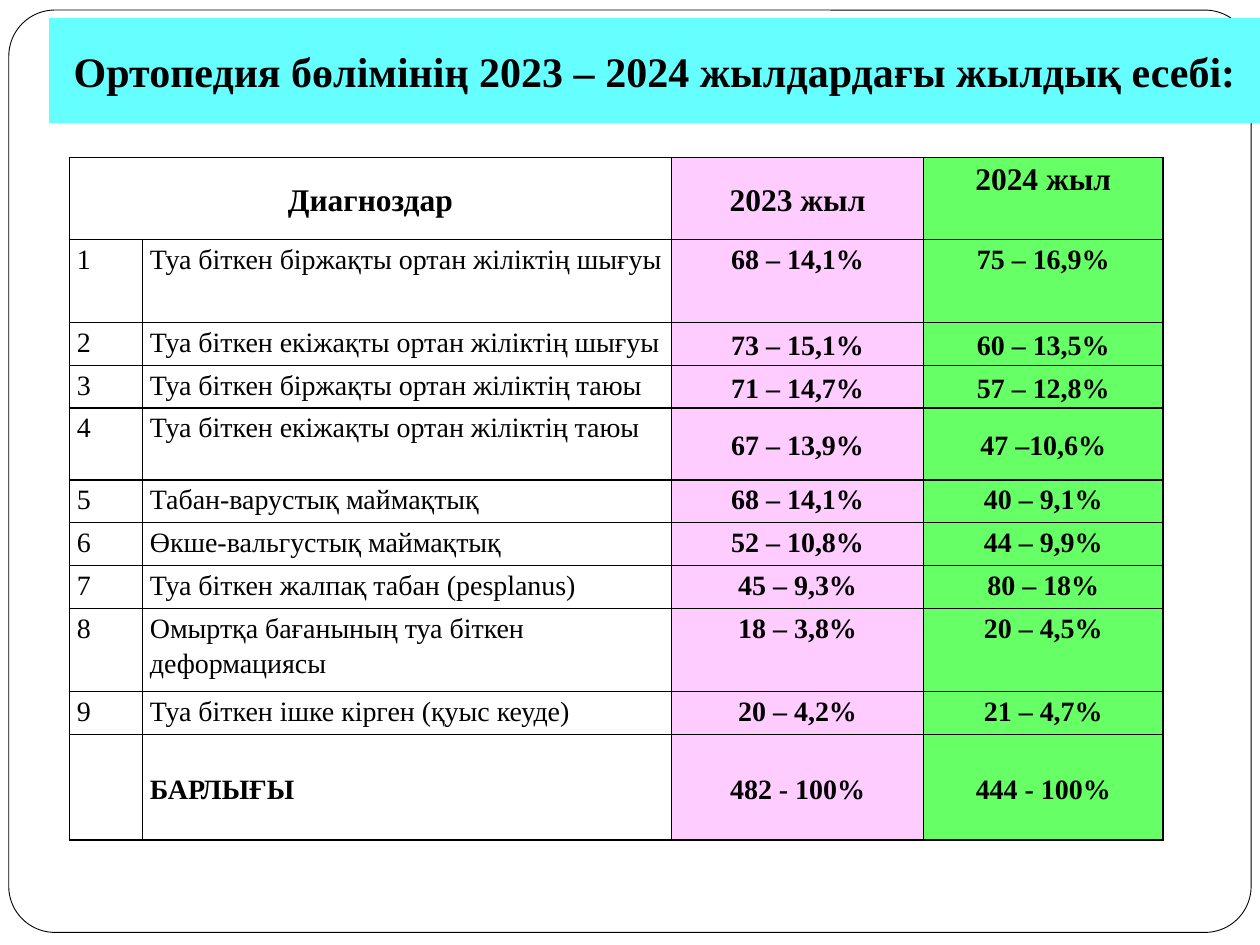
import dataclasses
import typing

import lxml.etree
import pptx
import pptx.dml.color
import pptx.enum.shapes
import pptx.enum.text
import pptx.oxml.ns
import pptx.util

Inches = pptx.util.Inches
Pt = pptx.util.Pt
Align = pptx.enum.text.PP_ALIGN
Anchor = pptx.enum.text.MSO_ANCHOR

FONT = "Times New Roman"
BLACK, WHITE, CYAN = "000000", "FFFFFF", "66FFFF"
PINK, GREEN = "FFCCFF", "66FF66"
FILLS = (None, None, PINK, GREEN)
ALIGNS = (Align.JUSTIFY, Align.LEFT, Align.CENTER, Align.CENTER)
WIDTHS = (0.58, 4.2, 2, 1.9)


@dataclasses.dataclass
class Row:
    name: str
    old: str
    new: str
    high: float = 0.34
    anchor: typing.Any = Anchor.TOP


HEAD = Row("Диагноздар", "2023 жыл", "2024 жыл", 0.65, Anchor.MIDDLE)
ITEMS = [
    Row("Туа біткен біржақты ортан жіліктің шығуы", "68 – 14,1%", "75 – 16,9%", 0.66),
    Row("Туа біткен екіжақты ортан жіліктің шығуы", "73 – 15,1%", "60 – 13,5%", anchor=Anchor.MIDDLE),
    Row("Туа біткен біржақты ортан жіліктің таюы", "71 – 14,7%", "57 – 12,8%", anchor=Anchor.MIDDLE),
    Row("Туа біткен екіжақты ортан жіліктің таюы", "67 – 13,9%", "47 –10,6%", 0.57, Anchor.MIDDLE),
    Row("Табан-варустық маймақтық", "68 – 14,1%", "40 – 9,1%"),
    Row("Өкше-вальгустық маймақтық", "52 – 10,8%", "44 – 9,9%"),
    Row("Туа біткен жалпақ табан (pesplanus)", "45 – 9,3%", "80 – 18%"),
    Row("Омыртқа бағанының туа біткен деформациясы", "18 – 3,8%", "20 – 4,5%", 0.66),
    Row("Туа біткен ішке кірген (қуыс кеуде)", "20 – 4,2%", "21 – 4,7%"),
]
TOTAL = Row("БАРЛЫҒЫ", "482 - 100%", "444 - 100%", 0.84, Anchor.MIDDLE)


def color(code: str) -> pptx.dml.color.RGBColor:
    return pptx.dml.color.RGBColor.from_string(code)


def apply(item: typing.Any, style: dict) -> None:
    for key, value in style.items():
        setattr(item, key, value)


def paint(item: typing.Any, code: str | None) -> None:
    if code is None:
        item.fill.background()
    else:
        item.fill.solid()
        item.fill.fore_color.rgb = color(code)


def write(frame: typing.Any, text: str, size: int, bold: bool, **para: typing.Any) -> None:
    line = frame.paragraphs[0]
    apply(line, para)
    run = line.add_run()
    run.text = text
    apply(run.font, {"name": FONT, "size": Pt(size), "bold": bold})
    run.font.color.rgb = color(BLACK)


def border(cell: typing.Any) -> None:
    props = cell._tc.get_or_add_tcPr()
    qn = pptx.oxml.ns.qn
    for side in ("lnL", "lnR", "lnT", "lnB"):
        line = lxml.etree.SubElement(props, qn(f"a:{side}"), w=str(Pt(1)))
        fill = lxml.etree.SubElement(line, qn("a:solidFill"))
        lxml.etree.SubElement(fill, qn("a:srgbClr"), val=BLACK)


def fill_cell(cell: typing.Any, text: str, col: int, anchor: typing.Any, head: bool, bold: bool) -> None:
    apply(cell, {
        "margin_left": Inches(0.06), "margin_right": Inches(0.06),
        "margin_top": 0, "margin_bottom": 0, "vertical_anchor": anchor,
    })
    border(cell)
    paint(cell, FILLS[col])
    if text:
        align = Align.CENTER if head else ALIGNS[col]
        write(cell.text_frame, text, 18 if head else 16, bold, alignment=align, line_spacing=1.15)


def draw_frame(slide: typing.Any) -> None:
    frame = slide.shapes.add_shape(
        pptx.enum.shapes.MSO_SHAPE.ROUNDED_RECTANGLE,
        Inches(0.07), Inches(0.08), Inches(9.86), Inches(7.32))
    frame.adjustments[0] = 0.05
    frame.shadow.inherit = False
    paint(frame, WHITE)
    frame.line.color.rgb = color(BLACK)
    frame.line.width = Pt(0.5)


def draw_table(slide: typing.Any) -> None:
    rows = [HEAD, *ITEMS, TOTAL]
    table = slide.shapes.add_table(
        len(rows), len(WIDTHS), Inches(0.55), Inches(1.25),
        Inches(sum(WIDTHS)), Inches(sum(row.high for row in rows))).table
    apply(table, {"first_row": False, "horz_banding": False})
    for col, width in zip(table.columns, WIDTHS):
        col.width = Inches(width)
    table.cell(0, 0).merge(table.cell(0, 1))
    for y, row in enumerate(rows):
        table.rows[y].height = Inches(row.high)
        head, total = row is HEAD, row is TOTAL
        texts = [row.name, "", row.old, row.new] if head else [
            "" if total else str(y), row.name, row.old, row.new]
        for x, text in enumerate(texts):
            label = x < 2 and not (head or total)
            top = label or (head and x == 3)
            anchor = Anchor.TOP if top else row.anchor
            fill_cell(table.cell(y, x), text, x, anchor, head, not label)


def draw_title(slide: typing.Any) -> None:
    title = slide.shapes.title
    apply(title, {
        "left": Inches(0.39), "top": Inches(0.31),
        "width": Inches(9.61), "height": Inches(0.5),
    })
    paint(title, CYAN)
    apply(title.text_frame, {
        "word_wrap": True, "vertical_anchor": Anchor.MIDDLE,
        "auto_size": pptx.enum.text.MSO_AUTO_SIZE.SHAPE_TO_FIT_TEXT,
    })
    write(title.text_frame, "Ортопедия бөлімінің 2023 – 2024 жылдардағы жылдық есебі:",
          24, True, alignment=Align.CENTER)
    slide.shapes._spTree.append(title._element)


def main() -> None:
    deck = pptx.Presentation()
    apply(deck, {"slide_width": Inches(10), "slide_height": Inches(7.5)})
    slide = deck.slides.add_slide(deck.slide_layouts[5])
    draw_frame(slide)
    draw_table(slide)
    draw_title(slide)
    deck.save("out.pptx")


if __name__ == "__main__":
    main()
